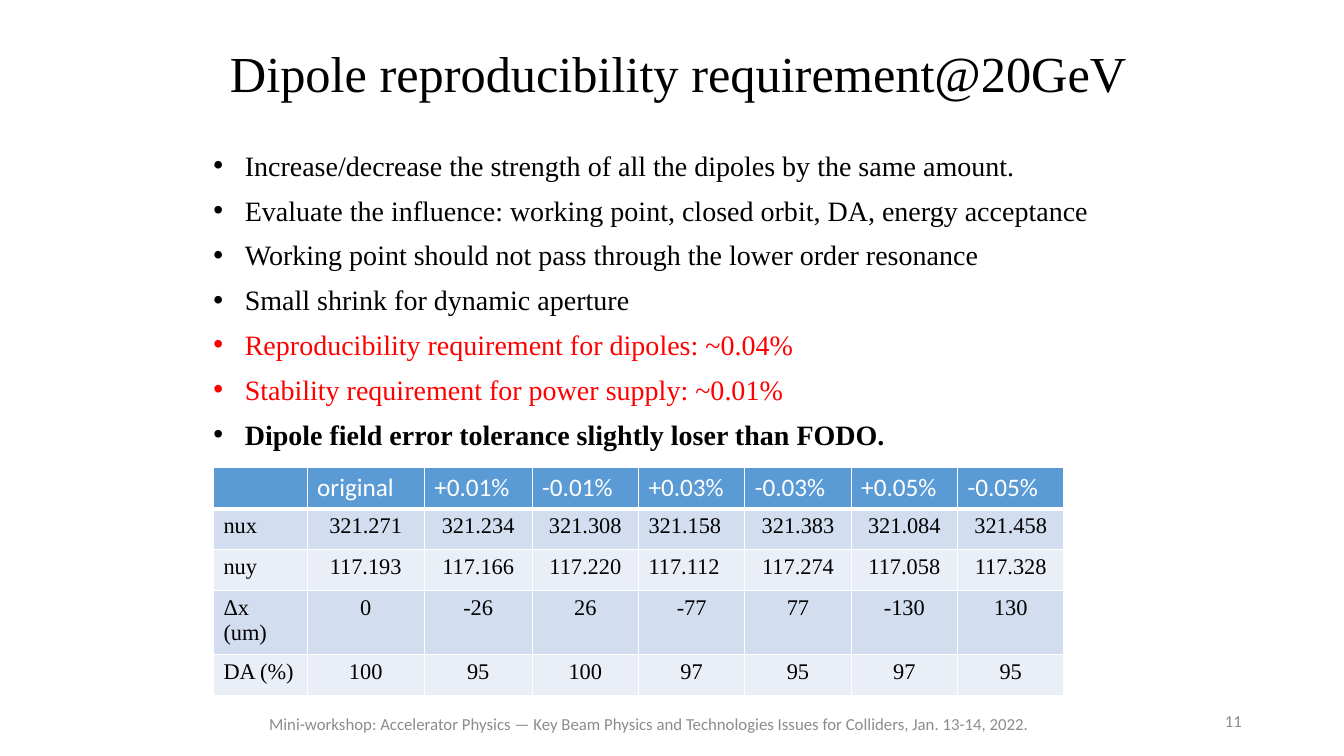
"""Build the slide on dipole reproducibility requirements at 20 GeV."""
import pptx
import pptx.dml.color
import pptx.enum.text
import pptx.oxml
import pptx.oxml.ns
import pptx.util
from pptx.util import Cm

ALIGN = pptx.enum.text.PP_ALIGN
ANCHOR = pptx.enum.text.MSO_ANCHOR

COLORS = {"text": "000000", "key": "FF0000", "header": "5B9BD5", "odd": "D2DEEF",
          "even": "EAEFF7", "white": "FFFFFF", "footer": "8C8C8C"}
SERIF, SANS = "Times New Roman", "Calibri"

TITLE = "Dipole reproducibility requirement@20GeV"
POINTS = [
    ("Increase/decrease the strength of all the dipoles by the same amount.", "text", False),
    ("Evaluate the influence: working point, closed orbit, DA, energy acceptance", "text", False),
    ("Working point should not pass through the lower order resonance", "text", False),
    ("Small shrink for dynamic aperture", "text", False),
    ("Reproducibility requirement for dipoles: ~0.04%", "key", False),
    ("Stability requirement for power supply: ~0.01%", "key", False),
    ("Dipole field error tolerance slightly loser than FODO.", "text", True),
]
RESULTS = [
    ["", "original", "+0.01%", "-0.01%", "+0.03%", "-0.03%", "+0.05%", "-0.05%"],
    ["nux", "321.271", "321.234", "321.308", "321.158", "321.383", "321.084", "321.458"],
    ["nuy", "117.193", "117.166", "117.220", "117.112", "117.274", "117.058", "117.328"],
    ["Δx (um)", "0", "-26", "26", "-77", "77", "-130", "130"],
    ["DA (%)", "100", "95", "100", "97", "95", "97", "95"],
]
LEFT_ALIGNED = {"321.158", "117.112"}
COLUMN_WIDTHS = [2.36, 2.95, 2.72] + [2.68] * 5
ROW_HEIGHT = 1.03
FOOTERS = [
    ("11", (23.93, 17.65, 7.62, 1.02), ALIGN.RIGHT),
    ("Mini-workshop: Accelerator Physics — Key Beam Physics and Technologies Issues"
     " for Colliders, Jan. 13-14, 2022.", (6.35, 17.73, 20.02, 1.02), ALIGN.CENTER),
]


def apply(target, values):
    for name, value in values.items():
        setattr(target, name, value)


def write(paragraph, text, size, font, color, bold=False, **layout):
    run = paragraph.add_run()
    run.text = text
    apply(paragraph, layout)
    apply(run.font, {"size": pptx.util.Pt(size), "name": font, "bold": bold})
    run.font.color.rgb = pptx.dml.color.RGBColor.from_string(COLORS[color])


def add_bullet(paragraph):
    properties = paragraph._p.get_or_add_pPr()
    apply_indent = {"marL": Cm(0.79), "indent": -Cm(0.79)}
    for name, value in apply_indent.items():
        properties.set(name, str(int(value)))
    for tag, name, value in (("a:buFont", "typeface", "Arial"), ("a:buChar", "char", "•")):
        pptx.oxml.ns.qn(tag)
        properties.append(pptx.oxml.parse_xml(
            f'<{tag} {pptx.oxml.ns.nsdecls("a")} {name}="{value}"/>'))


def add_borders(cell, bottom):
    for side, points in (("L", 1), ("R", 1), ("T", 1), ("B", bottom)):
        cell._tc.get_or_add_tcPr().append(pptx.oxml.parse_xml(
            f'<a:ln{side} {pptx.oxml.ns.nsdecls("a")} w="{pptx.util.Pt(points)}">'
            f'<a:solidFill><a:srgbClr val="{COLORS["white"]}"/></a:solidFill></a:ln{side}>'))


def add_text_frame(slide, box, anchor):
    frame = slide.shapes.add_textbox(*map(Cm, box)).text_frame
    apply(frame, {"word_wrap": True, "vertical_anchor": anchor})
    return frame


def add_results(slide):
    table = slide.shapes.add_table(
        len(RESULTS), len(COLUMN_WIDTHS), Cm(5.38), Cm(11.79),
        Cm(sum(COLUMN_WIDTHS)), Cm(ROW_HEIGHT * len(RESULTS))).table
    for column, width in zip(table.columns, COLUMN_WIDTHS):
        column.width = Cm(width)
    for row_index, values in enumerate(RESULTS):
        table.rows[row_index].height = Cm(ROW_HEIGHT)
        is_header = row_index == 0
        band = "header" if is_header else ("even", "odd")[row_index % 2]
        style = (18, SANS, "white") if is_header else (16, SERIF, "text")
        for column_index, value in enumerate(values):
            cell = table.cell(row_index, column_index)
            add_borders(cell, 3 if is_header else 1)
            cell.fill.solid()
            cell.fill.fore_color.rgb = pptx.dml.color.RGBColor.from_string(COLORS[band])
            is_left = is_header or column_index == 0 or value in LEFT_ALIGNED
            if value:
                write(cell.text_frame.paragraphs[0], value, *style,
                      alignment=ALIGN.LEFT if is_left else ALIGN.CENTER)


def main():
    deck = pptx.Presentation()
    apply(deck, {"slide_width": Cm(33.87), "slide_height": Cm(19.05)})
    slide = deck.slides.add_slide(deck.slide_layouts[5])

    title = slide.shapes.title
    apply(title, {"left": Cm(5.54), "top": Cm(0.33), "width": Cm(23.42), "height": Cm(3.18)})
    title.text_frame.vertical_anchor = ANCHOR.MIDDLE
    write(title.text_frame.paragraphs[0], TITLE, 36, SERIF, "text",
          alignment=ALIGN.LEFT, line_spacing=0.9)

    points = add_text_frame(slide, (5.13, 3.33, 24.51, 8.23), ANCHOR.TOP)
    for index, (text, color, bold) in enumerate(POINTS):
        paragraph = points.add_paragraph() if index else points.paragraphs[0]
        add_bullet(paragraph)
        write(paragraph, text, 20, SERIF, color, bold, line_spacing=pptx.util.Pt(32))

    add_results(slide)
    for text, box, alignment in FOOTERS:
        frame = add_text_frame(slide, box, ANCHOR.MIDDLE)
        write(frame.paragraphs[0], text, 12, SANS, "footer", alignment=alignment)

    deck.save("out.pptx")


if __name__ == "__main__":
    main()
